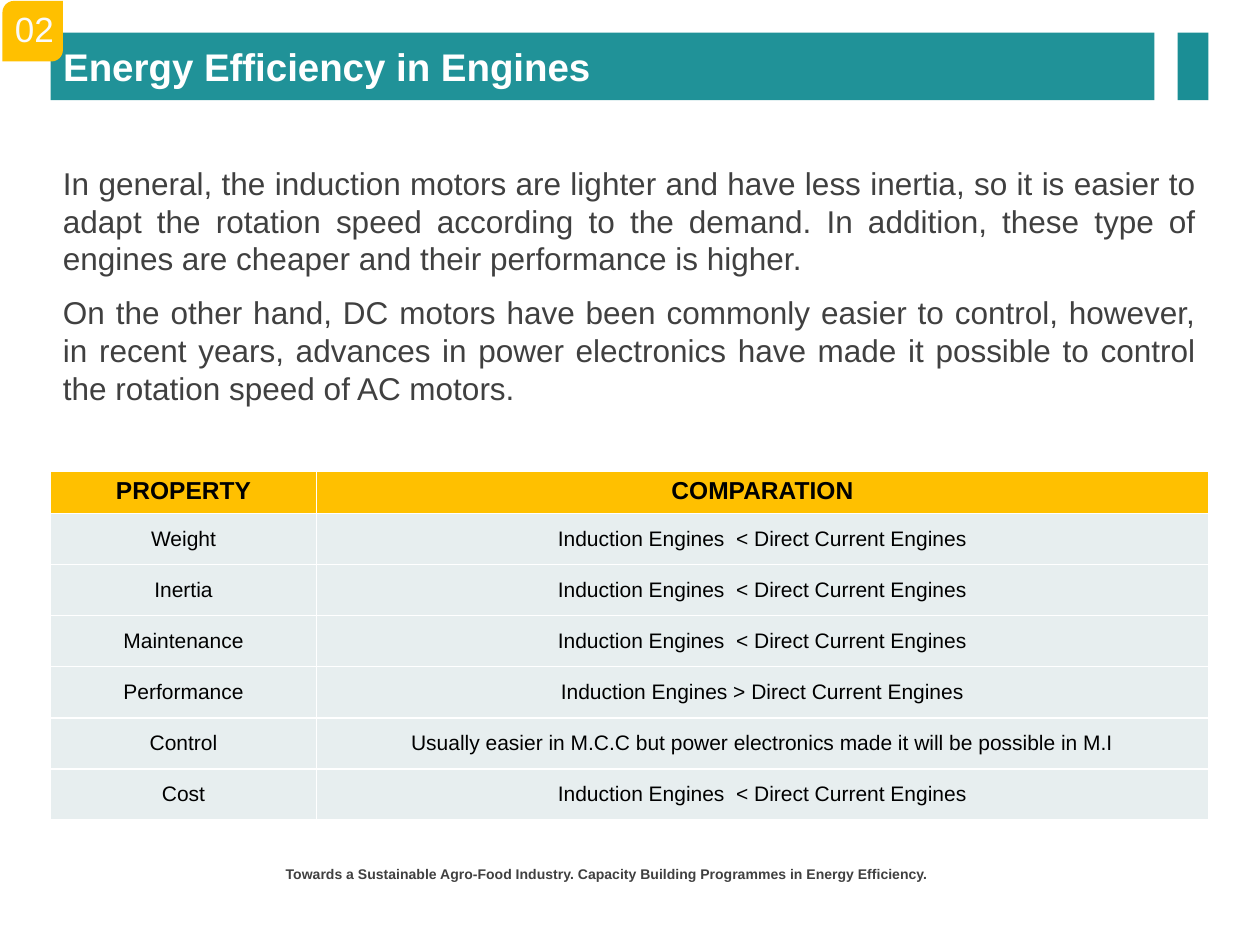
"""Build the slide comparing induction and direct current engines."""
from lxml.etree import SubElement
from pptx import Presentation
from pptx.dml.color import RGBColor
from pptx.enum.shapes import MSO_SHAPE as Kind
from pptx.enum.text import MSO_ANCHOR as Anchor, MSO_AUTO_SIZE as Auto, PP_ALIGN as Align
from pptx.oxml.ns import qn
from pptx.util import Cm, Pt

TITLE = "Energy Efficiency in Engines"
NUMBER = "02"
BODY = [
    "In general, the induction motors are lighter and have less inertia, so it is easier to "
    "adapt the rotation speed according to the demand. In addition, these type of engines are "
    "cheaper and their performance is higher.",
    "On the other hand, DC motors have been commonly easier to control, however, in recent "
    "years, advances in power electronics have made it possible to control the rotation speed "
    "of AC motors.",
]
LESS = "Induction Engines  < Direct Current Engines"
ROWS = [
    ("PROPERTY", "COMPARATION"),
    ("Weight", LESS),
    ("Inertia", LESS),
    ("Maintenance", LESS),
    ("Performance", "Induction Engines > Direct Current Engines"),
    ("Control", "Usually easier in M.C.C but power electronics made it will be possible in M.I"),
    ("Cost", LESS),
]
FOOTER = "Towards a Sustainable Agro-Food Industry. Capacity Building Programmes in Energy Efficiency."

LEFT, WIDTH = 1.02, 23.34
BAR_TOP, BAR_HIGH = 0.66, 1.36
COLS = (5.36, 17.98)
HEAD_HIGH, ROW_HIGH = 0.85, 1.03

FONTS = {
    "title": {"size": Pt(22), "bold": True, "color": "FFFFFF"},
    "number": {"size": Pt(20), "bold": False, "color": "FAFAFA"},
    "body": {"size": Pt(18), "bold": False, "color": "404040"},
    "footer": {"size": Pt(8), "bold": True, "color": "404040"},
    "head": {"size": Pt(14), "bold": True, "color": "000000"},
    "cell": {"size": Pt(12), "bold": False, "color": "000000"},
}


def paint(form, color):
    form.solid()
    form.fore_color.rgb = RGBColor.from_string(color)


def write(frame, texts, style, align, gap=0):
    for i, text in enumerate(texts):
        para = frame.add_paragraph() if i else frame.paragraphs[0]
        para.alignment = align
        para.space_before = Pt(gap if i else 0)
        run = para.add_run()
        run.text = text
        run.font.name = "Arial"
        for key, value in FONTS[style].items():
            if key == "color":
                paint(run.font.fill, value)
            else:
                setattr(run.font, key, value)


def place(shape, box):
    for key, value in zip(("left", "top", "width", "height"), box):
        setattr(shape, key, Cm(value))


def add_box(slide, box, texts, style, align, wrap=True, gap=0):
    frame = slide.shapes.add_textbox(*map(Cm, box)).text_frame
    frame.word_wrap = wrap
    write(frame, texts, style, align, gap)


def add_block(slide, kind, box, color):
    shape = slide.shapes.add_shape(kind, *map(Cm, box))
    shape.shadow.inherit = False
    paint(shape.fill, color)
    shape.line.fill.background()
    return shape


def add_title(slide):
    title = slide.shapes.title
    place(title, (LEFT, BAR_TOP, 22.25, BAR_HIGH))
    paint(title.fill, "209298")
    frame = title.text_frame
    frame.auto_size = Auto.NONE
    frame.vertical_anchor = Anchor.MIDDLE
    write(frame, [TITLE], "title", Align.LEFT)


def edge(cell):
    props = cell._tc.get_or_add_tcPr()
    for tag in ("a:lnL", "a:lnR", "a:lnT", "a:lnB"):
        line = SubElement(props, qn(tag), w=str(Pt(1)))
        fill = SubElement(line, qn("a:solidFill"))
        SubElement(fill, qn("a:srgbClr"), val="FFFFFF")


def add_grid(slide):
    high = HEAD_HIGH + ROW_HIGH * (len(ROWS) - 1)
    box = map(Cm, (LEFT, 9.5, WIDTH, high))
    table = slide.shapes.add_table(len(ROWS), len(COLS), *box).table
    for col, wide in zip(table.columns, COLS):
        col.width = Cm(wide)
    for r, texts in enumerate(ROWS):
        table.rows[r].height = Cm(ROW_HIGH if r else HEAD_HIGH)
        for c, text in enumerate(texts):
            cell = table.cell(r, c)
            edge(cell)
            paint(cell.fill, "E7EEEF" if r else "FFC000")
            cell.vertical_anchor = Anchor.MIDDLE if r else Anchor.TOP
            write(cell.text_frame, [text], "cell" if r else "head", Align.CENTER)


def main():
    deck = Presentation()
    deck.slide_width, deck.slide_height = Cm(25.4), Cm(19.05)
    slide = deck.slides.add_slide(deck.slide_layouts[5])
    add_title(slide)
    add_block(slide, Kind.RECTANGLE, (23.74, BAR_TOP, 0.62, BAR_HIGH), "1B8E95")
    badge = add_block(slide, Kind.ROUND_2_DIAG_RECTANGLE, (0.05, 0.02, 1.22, 1.22), "FFC000")
    badge.adjustments[0] = 0.19
    add_box(slide, (0.05, 0.02, 1.29, 1.11), [NUMBER], "number", Align.CENTER, wrap=False)
    add_box(slide, (LEFT, 3.18, WIDTH, 5.26), BODY, "body", Align.JUSTIFY, gap=9)
    add_grid(slide)
    add_box(slide, (5.51, 17.32, 13.97, 0.53), [FOOTER], "footer", Align.LEFT)
    deck.save("out.pptx")


if __name__ == "__main__":
    main()
